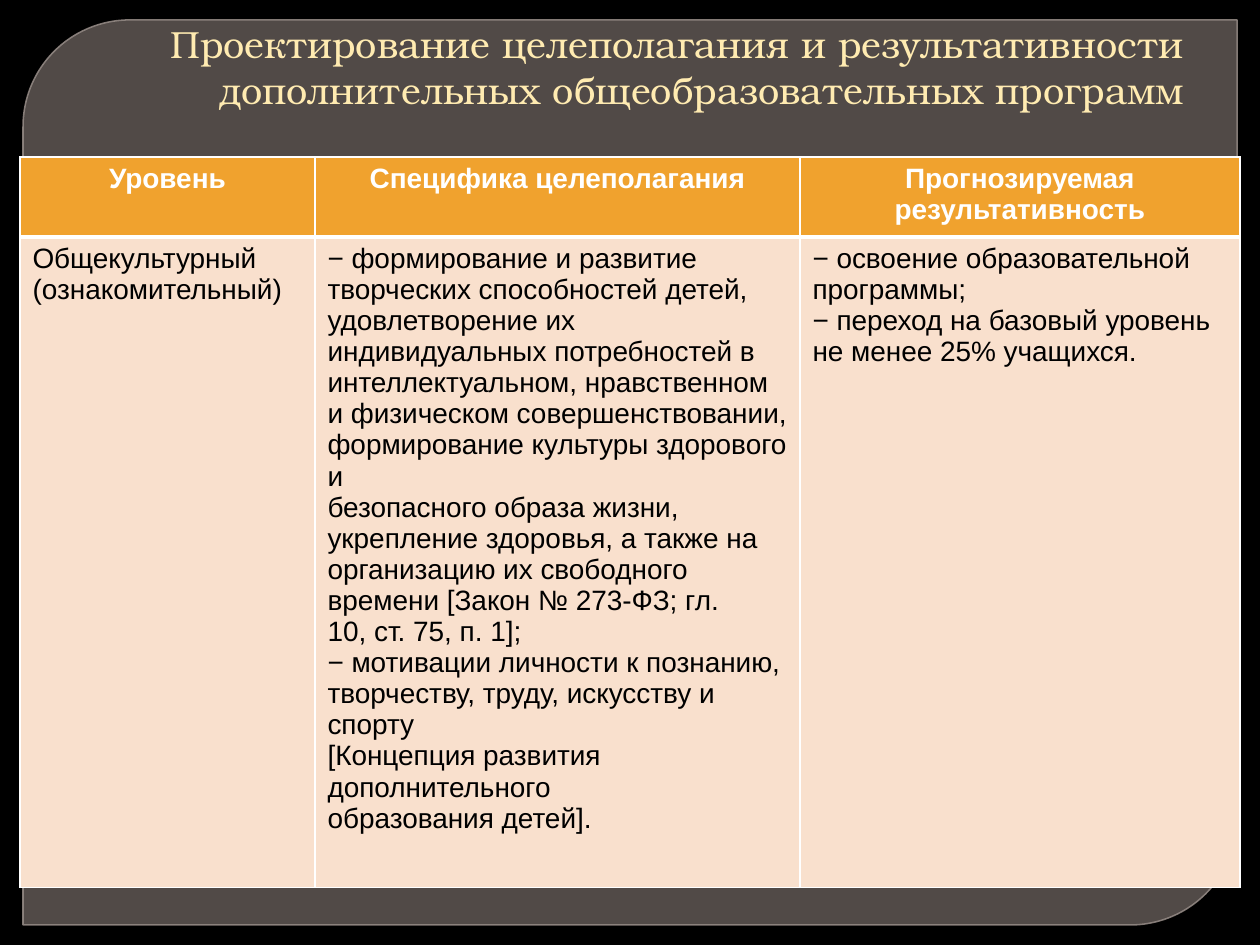
from lxml import etree
from pptx import Presentation
from pptx import util as u
from pptx.dml.color import RGBColor
from pptx.enum import shapes, text
from pptx.oxml import ns

PX = 914400 / 126


def px(*lengths):
    return [u.Emu(round(length * PX)) for length in lengths]


def paint(target, color):
    """Give a fill or a line a solid colour."""
    fill = getattr(target, "fill", target)
    fill.solid()
    fill.fore_color.rgb = RGBColor.from_string(color)


presentation = Presentation()
presentation.slide_width, presentation.slide_height = px(1260, 945)
slide = presentation.slides.add_slide(presentation.slide_layouts[6])
paint(slide.background, "000000")

# Translucent panel with two rounded corners
panel = slide.shapes.add_shape(shapes.MSO_SHAPE.ROUND_2_DIAG_RECTANGLE, *px(23, 20, 1214, 905))
panel.shadow.inherit = False
panel.adjustments[0] = 0.118
panel.adjustments[1] = 0
paint(panel, "7D726E")
paint(panel.line, "948A85")
panel.line.width = u.Pt(0.87)
for color, opacity in zip(panel._element.spPr.iter(ns.qn("a:srgbClr")), (65000, 88000)):
    etree.SubElement(color, ns.qn("a:alpha"), val=str(opacity))

# Title
title = slide.shapes.add_textbox(*px(63, 35, 1134, 83))
title.text_frame.word_wrap = True
title.text_frame.vertical_anchor = text.MSO_ANCHOR.BOTTOM
paragraph = title.text_frame.paragraphs[0]
paragraph.text = "Проектирование целеполагания и результативности дополнительных общеобразовательных программ"
paragraph.alignment = text.PP_ALIGN.RIGHT
paragraph.font.name = "TeX Gyre Bonum"
paragraph.font.size = u.Pt(21.6)
paint(paragraph.font, "FFEBB1")

# Table: header and one level, each cell a list of paragraphs
rows = [
    [["Уровень"], ["Специфика целеполагания"], ["Прогнозируемая результативность"]],
    [
        ["Общекультурный", "(ознакомительный)"],
        [
            "− формирование и развитие творческих способностей детей, удовлетворение их "
            "индивидуальных потребностей в интеллектуальном, нравственном и физическом "
            "совершенствовании,",
            "формирование культуры здорового и",
            "безопасного образа жизни, укрепление здоровья, а также на организацию их "
            "свободного времени [Закон № 273-ФЗ; гл.",
            "10, ст. 75, п. 1];",
            "− мотивации личности к познанию,",
            "творчеству, труду, искусству и спорту",
            "[Концепция развития дополнительного",
            "образования детей].",
        ],
        [
            "− освоение образовательной",
            "программы;",
            "− переход на базовый уровень не менее 25% учащихся.",
        ],
    ],
]
table = slide.shapes.add_table(2, 3, *px(20, 157, 1220, 710)).table
for column, width in zip(table.columns, px(295, 485, 440)):
    column.width = width
for row, height in zip(table.rows, px(75, 635)):
    row.height = height

for row_index, row in enumerate(rows):
    header = row_index == 0
    # Border widths in points; the header is parted from the body by a thick line
    borders = {"lnL": 1, "lnR": 1, "lnT": 1 if header else 3, "lnB": 3 if header else 1}
    for column_index, lines in enumerate(row):
        cell = table.cell(row_index, column_index)
        paint(cell, "F0A22E" if header else "F9E0CD")
        cell.text = "\n".join(lines)
        for paragraph in cell.text_frame.paragraphs:
            paragraph.alignment = text.PP_ALIGN.CENTER if header else text.PP_ALIGN.LEFT
            paragraph.font.name = "Arial"
            paragraph.font.size = u.Pt(16)
            paragraph.font.bold = header
            paint(paragraph.font, "FFFFFF" if header else "000000")
        properties = cell._tc.get_or_add_tcPr()
        for position, (side, width) in enumerate(borders.items()):
            border = etree.Element(ns.qn(f"a:{side}"), w=str(u.Pt(width)))
            fill = etree.SubElement(border, ns.qn("a:solidFill"))
            etree.SubElement(fill, ns.qn("a:srgbClr"), val="FFFFFF")
            properties.insert(position, border)

presentation.save("out.pptx")
